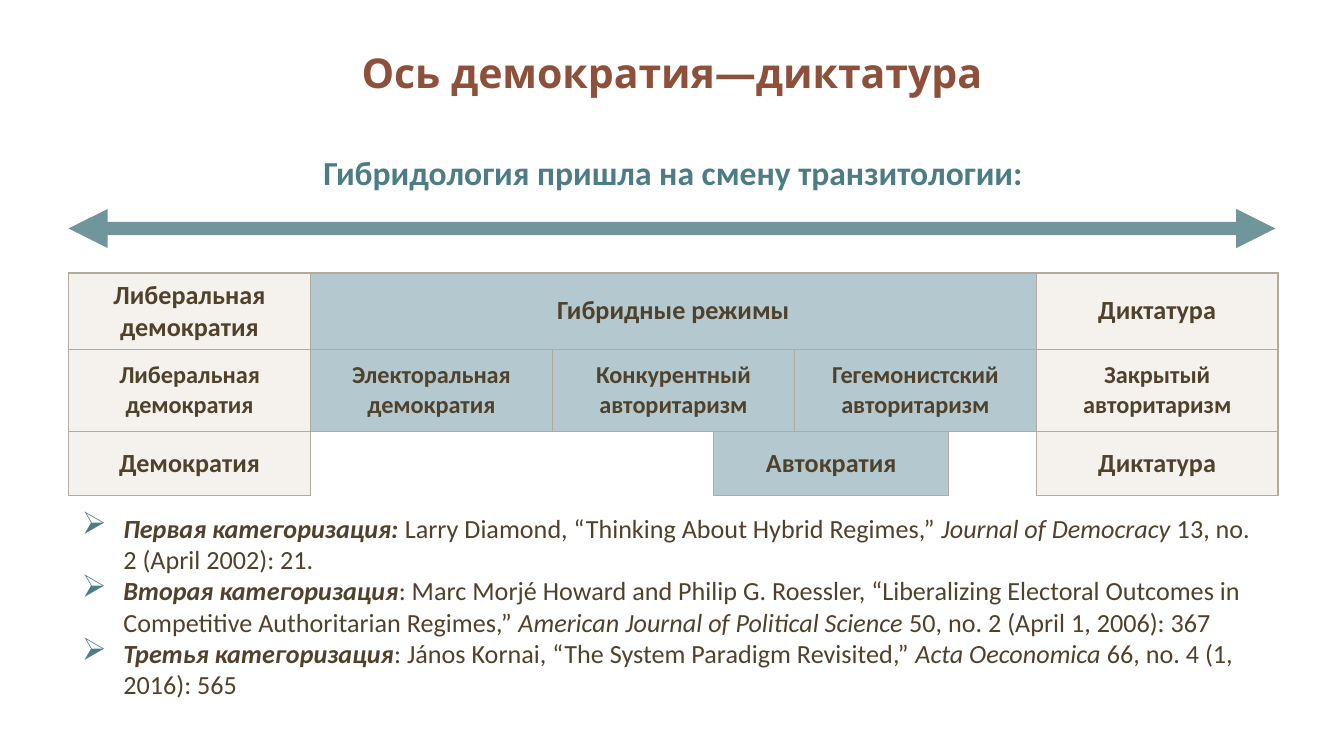
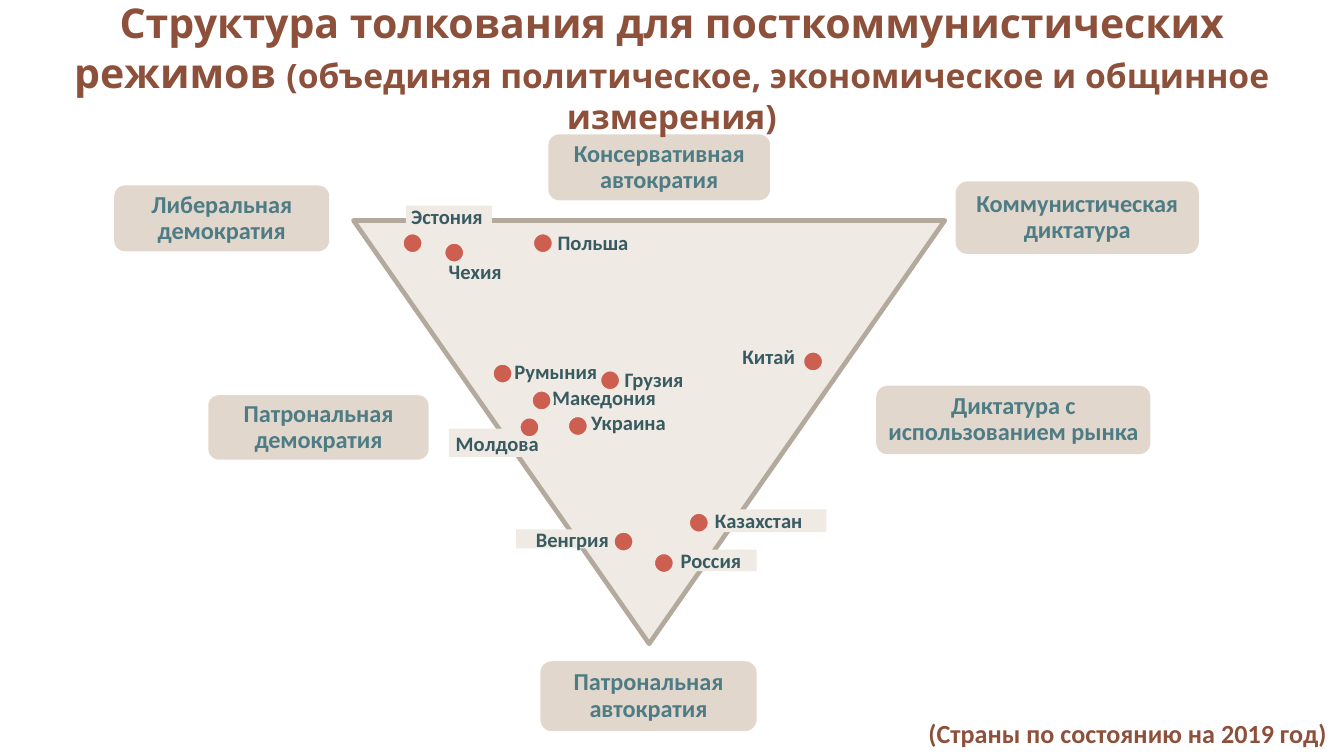
from dataclasses import dataclass

from lxml import etree
from pptx import Presentation, util as u
from pptx.dml.color import RGBColor
from pptx.enum import shapes, text
from pptx.oxml.ns import qn

LEFT, MID, RIGHT = text.PP_ALIGN.LEFT, text.PP_ALIGN.CENTER, text.PP_ALIGN.RIGHT
CELL = 0.1  # inches: the slide is a grid of 100 columns by 56.25 rows


class Theme:
    head, body = "Open Sans", "Calibri"
    rust, ink, teal, deep = "8D503B", "50412B", "4D7C84", "385A61"
    edge, cream, mist, sand, dot = "B3A99D", "EFEAE4", "6B95A1", "C7B09A", "CD5F50"
    big, mid, note, card, tag = 22, 18, 14, 13, 11


@dataclass
class Box:
    x: float
    y: float
    w: float
    h: float

    def area(self, x, y, w, h):
        """A box whose corner is counted from this one's corner."""
        return Box(self.x + x, self.y + y, w, h)

    def size(self):
        return [u.Inches(round(v * CELL, 3)) for v in (self.x, self.y, self.w, self.h)]


PAGE = Box(0, 0, 100, 56.25)


def write(frame, paras, font=Theme.body, size=Theme.note, color=Theme.ink, bold=True,
          align=MID, anchor=text.MSO_ANCHOR.MIDDLE, inset=None, after=None, lead=None,
          mark=None):
    """Fill a frame; paras is a string or a list of paragraphs of (text, changes) runs."""
    if isinstance(paras, str):
        paras = [[(paras, {})]]
    frame.word_wrap = True
    frame.vertical_anchor = anchor
    if inset is not None:
        frame.margin_left, frame.margin_top, frame.margin_right, frame.margin_bottom = (
            u.Inches(v) for v in inset)
    for n, runs in enumerate(paras):
        para = frame.add_paragraph() if n else frame.paragraphs[0]
        if mark:
            bullet(para, mark)
        para.alignment = align
        if after is not None:
            para.space_after = u.Pt(after)
        if lead:
            para.line_spacing = lead
        for words, diff in runs:
            run = para.add_run()
            run.text = words
            run.font.name = font
            run.font.size = u.Pt(diff.get("size", size))
            run.font.bold = diff.get("bold", bold)
            run.font.italic = diff.get("slant", False)
            run.font.color.rgb = RGBColor.from_string(color)


def bullet(para, mark):
    props = para._p.get_or_add_pPr()
    props.set("marL", str(u.Inches(0.31)))
    props.set("indent", str(u.Inches(-0.31)))
    tint = etree.SubElement(props, qn("a:buClr"))
    etree.SubElement(tint, qn("a:srgbClr"), val=Theme.teal)
    etree.SubElement(props, qn("a:buSzPct"), val="120000")
    etree.SubElement(props, qn("a:buChar"), char=mark)


def fade(node, share):
    """Set the opacity of the first colour in a node, in percent."""
    tint = next(node.iter(qn("a:srgbClr")))
    etree.SubElement(tint, qn("a:alpha"), val=str(share * 1000))


def label(slide, box, words, **form):
    write(slide.shapes.add_textbox(*box.size()).text_frame, words, **form)


def shape(slide, kind, box, fill, line=None, width=0, alpha=None):
    item = slide.shapes.add_shape(kind, *box.size())
    item.shadow.inherit = False
    item.fill.solid()
    item.fill.fore_color.rgb = RGBColor.from_string(fill)
    if alpha:
        fade(item.element.spPr, alpha)
    if line:
        item.line.color.rgb = RGBColor.from_string(line)
        item.line.width = u.Pt(width)
    else:
        item.line.fill.background()
    return item


def title(slide, box, runs):
    label(slide, box, [runs], font=Theme.head, size=Theme.big, color=Theme.rust)


# Slide 1: the axis

COLS = (18, 18, 12, 6, 11.5, 6.5, 18)
ROWS = (5.1, 6.1, 4.8)
TINTS = {"end": (Theme.cream, 60), "mix": (Theme.mist, 50)}
# Each row: text, number of columns, tint
KINDS = (
    (Theme.note, (("Либеральная демократия", 1, "end"), ("Гибридные режимы", 5, "mix"),
                  ("Диктатура", 1, "end"))),
    (Theme.card, (("Либеральная демократия", 1, "end"), ("Электоральная демократия", 1, "mix"),
                  ("Конкурентный авторитаризм", 2, "mix"),
                  ("Гегемонистский авторитаризм", 2, "mix"),
                  ("Закрытый авторитаризм", 1, "end"))),
    (Theme.note, (("Демократия", 1, "end"), ("", 1, None), ("", 1, None),
                  ("Автократия", 2, "mix"), ("", 1, None), ("Диктатура", 1, "end"))),
)
STRONG, SLANT, PLAIN = {"slant": True}, {"slant": True, "bold": False}, {"bold": False}
SOURCES = (
    (("Первая категоризация: ", STRONG),
     ("Larry Diamond, “Thinking About Hybrid Regimes,” ", PLAIN),
     ("Journal of Democracy", SLANT), (" 13, no. 2 (April 2002): 21.", PLAIN)),
    (("Вторая категоризация", STRONG),
     (": Marc Morjé Howard and Philip G. Roessler, “Liberalizing Electoral Outcomes in "
      "Competitive Authoritarian Regimes,” ", PLAIN),
     ("American Journal of Political Science", SLANT),
     (" 50, no. 2 (April 1, 2006): 367", PLAIN)),
    (("Третья категоризация", STRONG),
     (": János Kornai, “The System Paradigm Revisited,” ", PLAIN),
     ("Acta Oeconomica", SLANT), (" 66, no. 4 (1, 2016): 565", PLAIN)),
)


def arrow(slide, box):
    """A double-headed line along the top of the box."""
    x, y, w, _ = box.size()
    line = slide.shapes.add_connector(shapes.MSO_CONNECTOR.STRAIGHT, x, y, x + w, y)
    line.line.color.rgb = RGBColor.from_string(Theme.teal)
    line.line.width = u.Pt(7)
    props = line.element.spPr
    fade(props, 80)
    for end in ("a:headEnd", "a:tailEnd"):
        etree.SubElement(props.find(qn("a:ln")), qn(end), type="triangle")
    etree.SubElement(props, qn("a:effectLst"))


def border(cell, widths):
    """Draw left, right, top and bottom edges; a width of 0 hides one."""
    props = cell._tc.get_or_add_tcPr()
    for n, (side, width) in enumerate(zip("LRTB", widths)):
        line = etree.Element(qn("a:ln" + side), w=str(u.Pt(width)))
        if width:
            fill = etree.SubElement(line, qn("a:solidFill"))
            etree.SubElement(fill, qn("a:srgbClr"), val=Theme.edge)
        else:
            etree.SubElement(line, qn("a:noFill"))
        props.insert(n, line)


def grid(slide, box):
    table = slide.shapes.add_table(len(ROWS), len(COLS), *box.size()).table
    table.first_row = table.horz_banding = False
    for col, width in zip(table.columns, COLS):
        col.width = u.Inches(width * CELL)
    for row, height in zip(table.rows, ROWS):
        row.height = u.Inches(height * CELL)
    for r, (size, kinds) in enumerate(KINDS):
        c = 0
        for n, (words, span, tint) in enumerate(kinds):
            cell = table.cell(r, c)
            if span > 1:
                cell.merge(table.cell(r, c + span - 1))
            if tint:
                fill, alpha = TINTS[tint]
                cell.fill.solid()
                cell.fill.fore_color.rgb = RGBColor.from_string(fill)
                fade(cell._tc.tcPr, alpha)
                cell.vertical_anchor = text.MSO_ANCHOR.MIDDLE
                write(cell.text_frame, words, size=size)
                border(cell, [1 if rim else 0.5 for rim in (
                    c == 0, c + span == len(COLS), r == 0, r == len(ROWS) - 1)])
            else:
                cell.fill.background()
                border(cell, (0.5 if kinds[n - 1][2] else 0,
                              0.5 if kinds[n + 1][2] else 0, 0.5, 0))
            c += span


def axis(slide, box):
    title(slide, box.area(1.2, 0, 97.6, 10.8), [("Ось демократия—диктатура", {})])
    label(slide, box.area(1.3, 10.8, 97.6, 4), "Гибридология пришла на смену транзитологии:",
          size=Theme.mid, color=Theme.teal, anchor=text.MSO_ANCHOR.TOP)
    main = box.area(5.1, 17, 89.8, 36)
    arrow(slide, main)
    grid(slide, main.area(0, 3.3, main.w, sum(ROWS)))
    label(slide, main.area(0, 20.6, main.w, 15.1), SOURCES, align=LEFT,
          anchor=text.MSO_ANCHOR.TOP, mark="➢")


# Slide 2: the triangle

CARDS = (
    ("Коммунистическая диктатура", 71.1, 3.5, 18.1, 5.4),
    ("Либеральная демократия", 8.5, 3.8, 16, 4.9),
    ("Патрональная автократия", 40.2, 39.2, 16.1, 5.2),
    ("Консервативная автократия", 40.8, 0, 16.5, 4.9),
    ("Диктатура с использованием рынка", 65.2, 18.7, 20.4, 5.1),
    ("Патрональная демократия", 15.5, 19.4, 16.4, 4.8),
)
WIDE, SLIM, FLUSH = (0.1, 0.05, 0.1, 0.05), (0.04, 0.05, 0.04, 0.05), (0, 0.05, 0.04, 0.05)
# Name, dot, tag place, alignment, whether the tag is filled, insets
LANDS = (
    ("Китай", (59.7, 16.1), (53.9, 15.9, 6.6, 1.2), MID, False, WIDE),
    ("Польша", (39.6, 7.3), (40.5, 7.3, 7.5, 1.5), LEFT, False, WIDE),
    ("Эстония", (29.9, 7.3), (30.2, 5.3, 6.4, 1.6), LEFT, True, SLIM),
    ("Румыния", (36.6, 17), (37.3, 17.1, 8.4, 1.1), LEFT, False, WIDE),
    ("Македония", (39.5, 19), (40.1, 18.5, 10.1, 2.1), LEFT, False, WIDE),
    ("Грузия", (44.6, 17.5), (45.5, 17.5, 7.3, 1.4), LEFT, False, WIDE),
    ("Украина", (42.2, 20.9), (43, 20.4, 7.8, 2.1), LEFT, False, WIDE),
    ("Венгрия", (45.6, 29.5), (38.4, 29.4, 7.9, 1.4), RIGHT, True, WIDE),
    ("Россия", (48.6, 31.1), (49.5, 30.9, 6.8, 1.6), MID, True, WIDE),
    ("Казахстан", (51.2, 28.1), (52.2, 27.9, 9.3, 1.7), LEFT, True, WIDE),
    ("Чехия", (33, 8), (32.4, 9, 11.8, 2.4), LEFT, False, WIDE),
    ("Молдова", (38.6, 21), (33.4, 21.9, 7.1, 2.1), RIGHT, True, FLUSH),
)


def field(slide, box):
    """The triangle, the regime cards around it and the countries inside."""
    kind = shapes.MSO_SHAPE
    shape(slide, kind.ISOSCELES_TRIANGLE, box.area(26.3, 6.4, 44, 31.5), Theme.cream,
          Theme.edge, 2.5).rotation = 180
    for words, *place in CARDS:
        card = shape(slide, kind.ROUNDED_RECTANGLE, box.area(*place), Theme.sand, alpha=50)
        write(card.text_frame, words, size=Theme.card, color=Theme.teal, lead=0.9,
              inset=(0.05,) * 4)
    for name, _, place, align, filled, inset in LANDS:
        form = dict(size=Theme.tag, color=Theme.deep, align=align, inset=inset, after=10)
        spot = box.area(*place)
        if filled:
            write(shape(slide, kind.RECTANGLE, spot, Theme.cream).text_frame, name, **form)
        else:
            label(slide, spot, name, **form)
    for _, dot, *_ in LANDS:
        shape(slide, kind.OVAL, box.area(*dot, 1.6, 1.6), Theme.dot, Theme.cream, 2)


def regimes(slide, box):
    field(slide, box.area(0, 10, box.w, box.h - 10))
    title(slide, box.area(1.2, 0, 97.6, 10), [
        ("Структура толкования для посткоммунистических режимов ", {}),
        ("(объединяя политическое, экономическое и общинное измерения)", {"size": Theme.mid})])
    label(slide, box.area(68.1, 52.9, 31.9, 3.4), "(Страны по состоянию на 2019 год)",
          color=Theme.rust, align=LEFT, anchor=text.MSO_ANCHOR.TOP)


def main():
    deck = Presentation()
    _, _, deck.slide_width, deck.slide_height = PAGE.size()
    for draw in (axis, regimes):
        draw(deck.slides.add_slide(deck.slide_layouts[6]), PAGE)
    deck.save("out.pptx")


if __name__ == "__main__":
    main()
